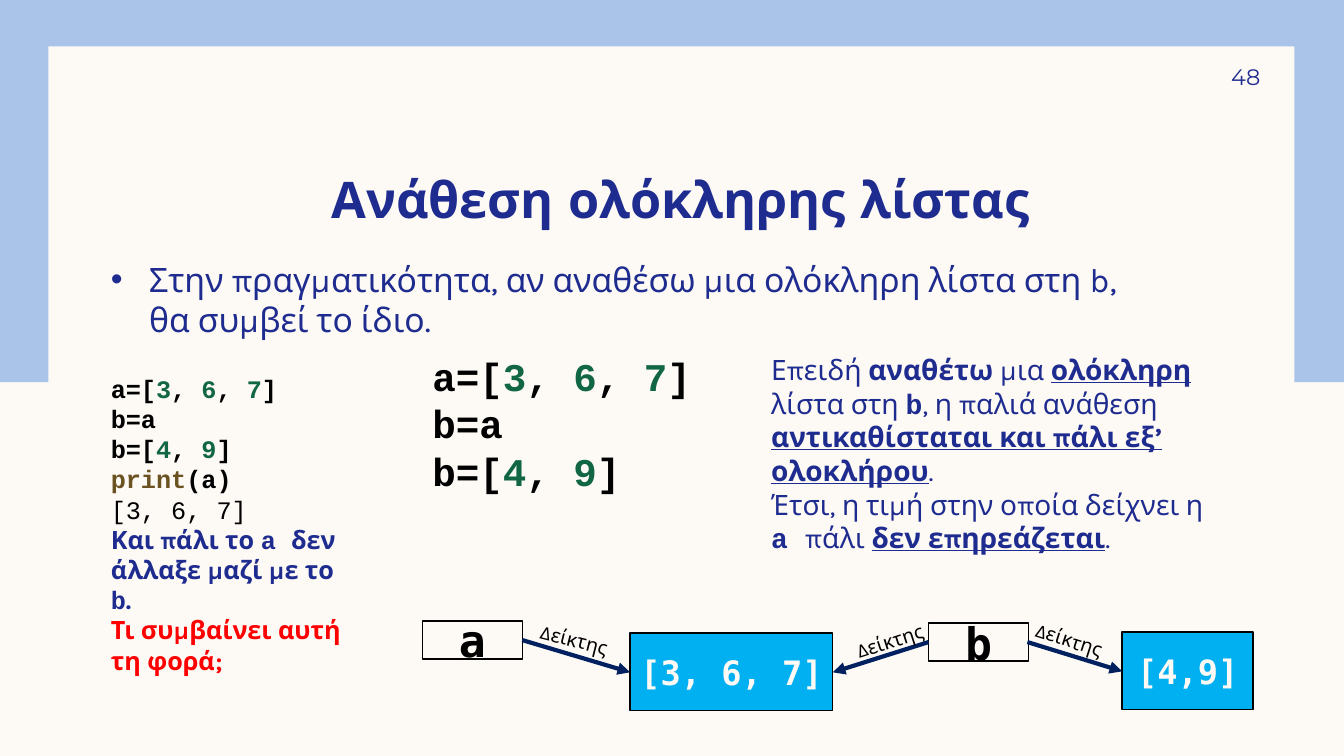
from dataclasses import dataclass
from itertools import groupby

from lxml import etree
from pptx import Presentation
from pptx import util as u
from pptx.dml.color import RGBColor
from pptx.enum import shapes, text
from pptx.oxml.ns import qn

Inches, Pt = u.Inches, u.Pt
LEFT, CENTER, RIGHT = text.PP_ALIGN.LEFT, text.PP_ALIGN.CENTER, text.PP_ALIGN.RIGHT
TOP, MIDDLE, BOTTOM = text.MSO_ANCHOR.TOP, text.MSO_ANCHOR.MIDDLE, text.MSO_ANCHOR.BOTTOM


@dataclass(frozen=True)
class Theme:
    """Colours, fonts and type sizes of the deck."""
    paper: str = "FDFAF6"
    band: str = "AAC3E8"
    navy: str = "1F2C8F"
    black: str = "000000"
    number: str = "116644"
    builtin: str = "6A5221"
    alert: str = "FF0000"
    value: str = "00B0F0"
    arrow: str = "002060"
    head: str = "Montserrat"
    text: str = "Karla"
    code: str = "Courier New"
    box: str = "DejaVu Sans Mono"
    title: int = 36
    name: int = 32
    big_code: int = 28
    body: int = 24
    note: int = 20
    small: int = 18
    page: int = 16
    label: int = 14


T = Theme()


def rgb(value):
    """Turn a hex string into a colour."""
    return RGBColor.from_string(value)


def add_run(p, words, size=T.small, font=T.text, color=T.navy, bold=False, underline=None):
    """Add one formatted run to a paragraph."""
    r = p.add_run()
    r.text = words
    f = r.font
    f.size, f.name, f.bold, f.underline = Pt(size), font, bold, underline
    f.color.rgb = rgb(color)


def fill_text(tf, paragraphs, align=LEFT, anchor=TOP, insets=(0.1, 0.05, 0.1, 0.05), **base):
    """Write paragraphs, each a list of (words, format) pairs, into a frame."""
    tf.word_wrap = True
    tf.vertical_anchor = anchor
    tf.margin_left, tf.margin_top, tf.margin_right, tf.margin_bottom = map(Inches, insets)
    for i, parts in enumerate(paragraphs):
        p = tf.paragraphs[0] if i == 0 else tf.add_paragraph()
        p.alignment = align
        for words, fmt in parts:
            add_run(p, words, **{**base, **fmt})


def code_line(line, size):
    """Split a line of code so that its numbers are coloured."""
    return [("".join(g), dict(size=size, font=T.code, bold=True,
                              color=T.number if digit else T.black))
            for digit, g in groupby(line, str.isdigit)]


class Deck:
    """Holds the theme, the presentation and the current slide."""

    def __init__(self, theme):
        """Open a wide presentation with one title-and-content slide."""
        self.t = theme
        self.prs = Presentation()
        self.prs.slide_width, self.prs.slide_height = Inches(13.33), Inches(7.5)
        self.s = self.prs.slides.add_slide(self.prs.slide_layouts[1])
        self.s.background.fill.solid()
        self.s.background.fill.fore_color.rgb = rgb(theme.paper)

    def placeholder(self, index, at, paragraphs, **fmt):
        """Move and fill a template placeholder."""
        sp = self.s.placeholders[index]
        sp.left, sp.top, sp.width, sp.height = map(Inches, at)
        fill_text(sp.text_frame, paragraphs, **fmt)
        sp.text_frame.auto_size = text.MSO_AUTO_SIZE.NONE
        return sp

    def bullet(self, p, indent, before):
        """Give a paragraph a hanging bullet."""
        p.space_before = Pt(before)
        pPr = p._p.get_or_add_pPr()
        pPr.set("marL", str(Inches(indent)))
        pPr.set("indent", str(-Inches(indent)))
        etree.SubElement(pPr, qn("a:buFont")).set("typeface", "Arial")
        etree.SubElement(pPr, qn("a:buChar")).set("char", "•")

    def rect(self, at, fill=None, line=None, words=None, **fmt):
        """Draw a rectangle, optionally with centred words."""
        sp = self.s.shapes.add_shape(shapes.MSO_SHAPE.RECTANGLE, *map(Inches, at))
        sp.shadow.inherit = False
        if fill:
            sp.fill.solid()
            sp.fill.fore_color.rgb = rgb(fill)
        else:
            sp.fill.background()
        if line:
            sp.line.color.rgb = rgb(line)
            sp.line.width = Pt(1)
        else:
            sp.line.fill.background()
        if words:
            fill_text(sp.text_frame, [[(words, fmt)]], align=CENTER, anchor=MIDDLE)

    def textbox(self, at, paragraphs, rotation=0, grow=True, **fmt):
        """Add a wrapped text box."""
        sp = self.s.shapes.add_textbox(*map(Inches, at))
        fill_text(sp.text_frame, paragraphs, **fmt)
        if grow:
            sp.text_frame.auto_size = text.MSO_AUTO_SIZE.SHAPE_TO_FIT_TEXT
        sp.rotation = rotation

    def arrow(self, start, end):
        """Draw a pointer arrow."""
        c = self.s.shapes.add_connector(shapes.MSO_CONNECTOR.STRAIGHT,
                                        *map(Inches, start + end))
        c.line.color.rgb = rgb(self.t.arrow)
        c.line.width = Pt(3)
        etree.SubElement(c.line._get_or_add_ln(), qn("a:tailEnd")).set("type", "triangle")
        etree.SubElement(c._element.spPr, qn("a:effectLst"))


def main():
    """Build the slide about assigning a whole list."""
    d = Deck(T)
    d.rect((-0.03, 0, 13.36, 3.79), T.band)
    d.rect((0.48, 0.46, 12.36, 6.59), T.paper)
    tree = d.s.shapes._spTree
    for sp in list(d.s.placeholders):
        tree.append(sp._element)

    d.placeholder(0, (1, 1.16, 11.5, 1.11), [[("Ανάθεση ολόκληρης λίστας", {})]],
                  align=CENTER, anchor=BOTTOM, insets=(0.1, 0, 0.1, 0),
                  size=T.title, font=T.head, bold=True)
    body = d.placeholder(1, (1, 2.47, 10.24, 4.38), [[(
        "Στην πραγματικότητα, αν αναθέσω μια ολόκληρη λίστα στη b, θα συμβεί το ίδιο.", {})]],
        insets=(0.1,) * 4, size=T.body)
    d.bullet(body.text_frame.paragraphs[0], 0.38, 10)
    d.textbox((11.33, 0.5, 1.17, 0.52), [[("48", {})]], grow=False, align=RIGHT,
              anchor=MIDDLE, insets=(0.1, 0.05, 0, 0.05), size=T.page, font=T.head)

    listing = ["a=[3, 6, 7]", "b=a", "b=[4, 9]"]
    strong = dict(bold=True)
    marked = dict(bold=True, underline=True)
    name = dict(bold=True, font=T.code)
    mono = dict(font=T.code, color=T.black)
    d.textbox((1, 3.65, 2.65, 2.83), [code_line(x, T.small) for x in listing] + [
        [("print", {**name, "color": T.builtin}), ("(a)", {**mono, **strong})],
        [("[3, 6, 7]", mono)],
        [("Και πάλι το ", strong), ("a ", name), ("δεν άλλαξε μαζί με το ", strong),
         ("b", name), (".", strong)],
        [("Τι συμβαίνει αυτή τη φορά;", dict(bold=True, color=T.alert))]])
    d.textbox((4.19, 3.45, 2.92, 1.51), [code_line(x, T.big_code) for x in listing])
    d.textbox((7.55, 3.45, 4.57, 2.12), [
        [("Επειδή ", {}), ("αναθέτω", strong), (" μια ", {}), ("ολόκληρη", marked),
         (" λίστα στη ", {}), ("b", name), (", η παλιά ανάθεση ", {}),
         ("αντικαθίσταται και πάλι εξ’ ολοκλήρου", marked), (".", {})],
        [("Έτσι, η τιμή στην οποία δείχνει η ", {}), ("a ", name), ("πάλι ", {}),
         ("δεν επηρεάζεται", marked), (".", {})]], size=T.note)

    for left, top, width, words in [(6.25, 6.28, 2.01, "[3, 6, 7]"), (11.13, 6.27, 1.3, "[4,9]")]:
        d.rect((left, top, width, 0.77), T.value, T.black, words,
               size=T.body, font=T.box, color=T.paper, bold=True)
    for left, top, words in [(4.19, 6.16, "a"), (9.21, 6.18, "b")]:
        d.rect((left, top, 0.99, 0.38), None, T.black, words,
               size=T.name, font=T.box, color=T.black, bold=True)
    for start, end, left, top, angle in [
            ((5.18, 6.35), (6.25, 6.67), 5.12, 6.18, 14.3),
            ((9.21, 6.37), (8.26, 6.67), 8.25, 6.19, 342.1),
            ((10.19, 6.37), (11.13, 6.66), 10.03, 6.18, 17.8)]:
        d.arrow(start, end)
        d.textbox((left, top, 1.15, 0.34), [[("Δείκτης", {})]], rotation=angle,
                  align=CENTER, size=T.label, color=T.black)
    d.prs.save("out.pptx")


if __name__ == "__main__":
    main()
